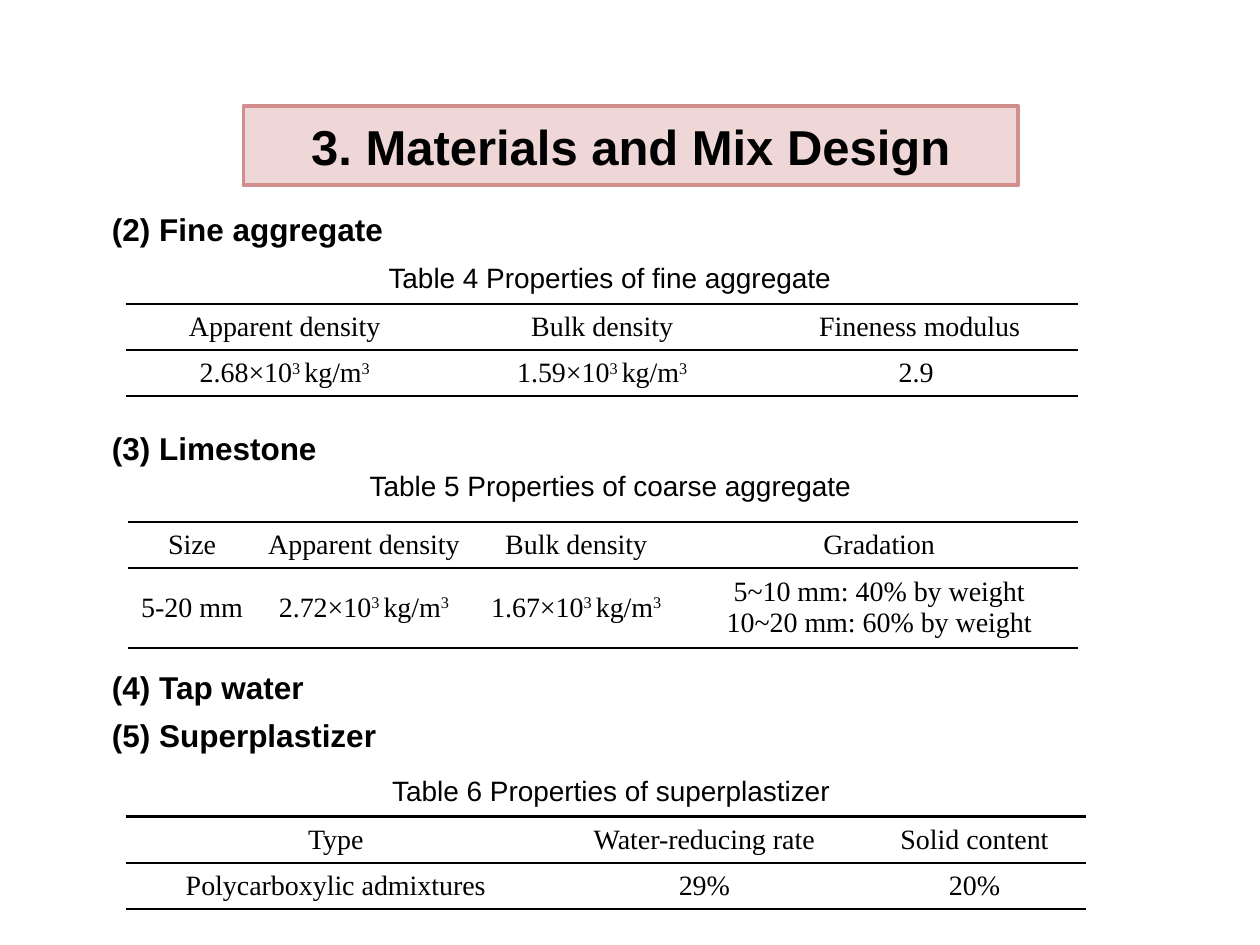
from lxml.etree import SubElement
from pptx import Presentation
from pptx.dml.color import RGBColor
from pptx.enum.shapes import MSO_SHAPE
from pptx.enum.text import MSO_ANCHOR, PP_ALIGN
from pptx.oxml import parse_xml
from pptx.oxml.ns import nsdecls, qn
from pptx.util import Pt

BLACK = RGBColor(0x00, 0x00, 0x00)
PINK = RGBColor(0xE6, 0xB9, 0xB8)
ROSE = RGBColor(0xD2, 0x8E, 0x8C)
SANS, SERIF = "Arial", "Times New Roman"
HEADING_INDENT = 31.7
ROW_H = 26.4
THICK, THIN = 1.5, 1

TABLE_4 = [
    ["Apparent density", "Bulk density", "Fineness modulus"],
    ["2.68×10^3 ^kg/m^3", "1.59×10^3 ^kg/m^3", "2.9 "],
]
TABLE_5 = [
    ["Size", "Apparent density", "Bulk density", "Gradation"],
    ["5-20 mm", "2.72×10^3 ^kg/m^3", "1.67×10^3 ^kg/m^3",
     "5~10 mm: 40% by weight\n10~20 mm: 60% by weight"],
]
TABLE_6 = [
    ["Type", "Water-reducing rate", "Solid content"],
    ["Polycarboxylic admixtures", "29%", "20%"],
]


def add_text(tf, text, size, font, bold=False, align=PP_ALIGN.CENTER):
    """Write one paragraph per line, with superscripts between carets."""
    for i, line in enumerate(text.split("\n")):
        p = tf.add_paragraph() if i else tf.paragraphs[0]
        p.alignment = align
        for j, part in enumerate(filter(None, line.split("^"))):
            r = p.add_run()
            r.text = part
            r.font.size, r.font.name, r.font.bold = Pt(size), font, bold
            r.font.color.rgb = BLACK
            if j % 2:
                r.font._element.set("baseline", "30000")


def add_title(s, text):
    """Add the title in a framed, translucent box."""
    sp = s.shapes.add_shape(MSO_SHAPE.RECTANGLE, Pt(139), Pt(60.5), Pt(442.8), Pt(45.4))
    sp.shadow.inherit = False
    sp.fill.solid()
    sp.fill.fore_color.rgb = PINK
    color = sp.fill._xPr.find(qn("a:solidFill"))[0]
    SubElement(color, qn("a:alpha"), val="56000")
    sp.line.color.rgb = ROSE
    sp.line.width = Pt(2)
    tf = sp.text_frame
    tf.word_wrap = False
    tf.vertical_anchor = MSO_ANCHOR.MIDDLE
    add_text(tf, text, 28, SANS, bold=True)


def add_heading(s, text, top, height=28.8):
    """Add bold, indented section headings."""
    tf = s.shapes.add_textbox(Pt(25.2), Pt(top), Pt(648), Pt(height)).text_frame
    tf.word_wrap = True
    add_text(tf, text, 18, SANS, bold=True, align=PP_ALIGN.LEFT)
    for p in tf.paragraphs:
        p.level = 1
        p.space_after = Pt(6)
        pPr = p._p.get_or_add_pPr()
        pPr.set("marL", str(Pt(HEADING_INDENT)))
        pPr.set("indent", "0")


def add_caption(s, text, top, left, width):
    """Add a centred table caption."""
    tf = s.shapes.add_textbox(Pt(left), Pt(top), Pt(width), Pt(26.6)).text_frame
    tf.word_wrap = False
    add_text(tf, text, 16, SANS)


def set_rules(cell, top, bottom):
    """Draw only the horizontal rules of a cell."""
    tcPr = cell._tc.get_or_add_tcPr()
    for i, (side, width) in enumerate(zip("LRTB", (0, 0, top, bottom))):
        fill = (f'<a:solidFill><a:srgbClr val="{BLACK}"/></a:solidFill>'
                if width else "<a:noFill/>")
        tcPr.insert(i, parse_xml(
            f'<a:ln{side} {nsdecls("a")} w="{Pt(width)}">{fill}</a:ln{side}>'))


def add_ruled_table(s, rows, left, top, widths, heights=(ROW_H, ROW_H)):
    """Add a table with rules above, between and below its rows."""
    table = s.shapes.add_table(len(rows), len(widths), Pt(left), Pt(top),
                               Pt(sum(widths)), Pt(sum(heights))).table
    table.first_row = table.horz_banding = False
    for col, width in zip(table.columns, widths):
        col.width = Pt(width)
    rules = [THICK] + [THIN] * (len(rows) - 1) + [THICK]
    for i, values in enumerate(rows):
        table.rows[i].height = Pt(heights[i])
        for j, value in enumerate(values):
            cell = table.cell(i, j)
            cell.fill.background()
            cell.vertical_anchor = MSO_ANCHOR.MIDDLE
            cell.margin_left = cell.margin_right = Pt(5.4)
            cell.margin_top = cell.margin_bottom = Pt(3.6)
            add_text(cell.text_frame, value, 16, SERIF)
            set_rules(cell, rules[i], rules[i + 1])


def main():
    """Build the slide and save it."""
    prs = Presentation()
    prs.slide_width, prs.slide_height = Pt(720), Pt(540)
    s = prs.slides.add_slide(prs.slide_layouts[6])
    add_title(s, "3. Materials and Mix Design")
    add_heading(s, "(2) Fine aggregate", 116.6)
    add_caption(s, "Table 4 Properties of fine aggregate", 145.4, 213.1, 270.7)
    add_ruled_table(s, TABLE_4, 72, 173.5, [181.4] * 3)
    add_heading(s, "(3) Limestone", 241.9)
    add_caption(s, "Table 5 Properties of coarse aggregate", 264.2, 202.3, 293)
    add_ruled_table(s, TABLE_5, 73.4, 298.1, [72.7, 123.8, 118.8, 227.5], (ROW_H, 45.6))
    add_heading(s, "(4) Tap water\n(5) Superplastizer", 378, 56.9)
    add_caption(s, "Table 6 Properties of superplastizer", 438.5, 215.3, 267.8)
    add_ruled_table(s, TABLE_6, 72, 466.6, [239.8, 181.4, 127.4])
    prs.save("out.pptx")


if __name__ == "__main__":
    main()
